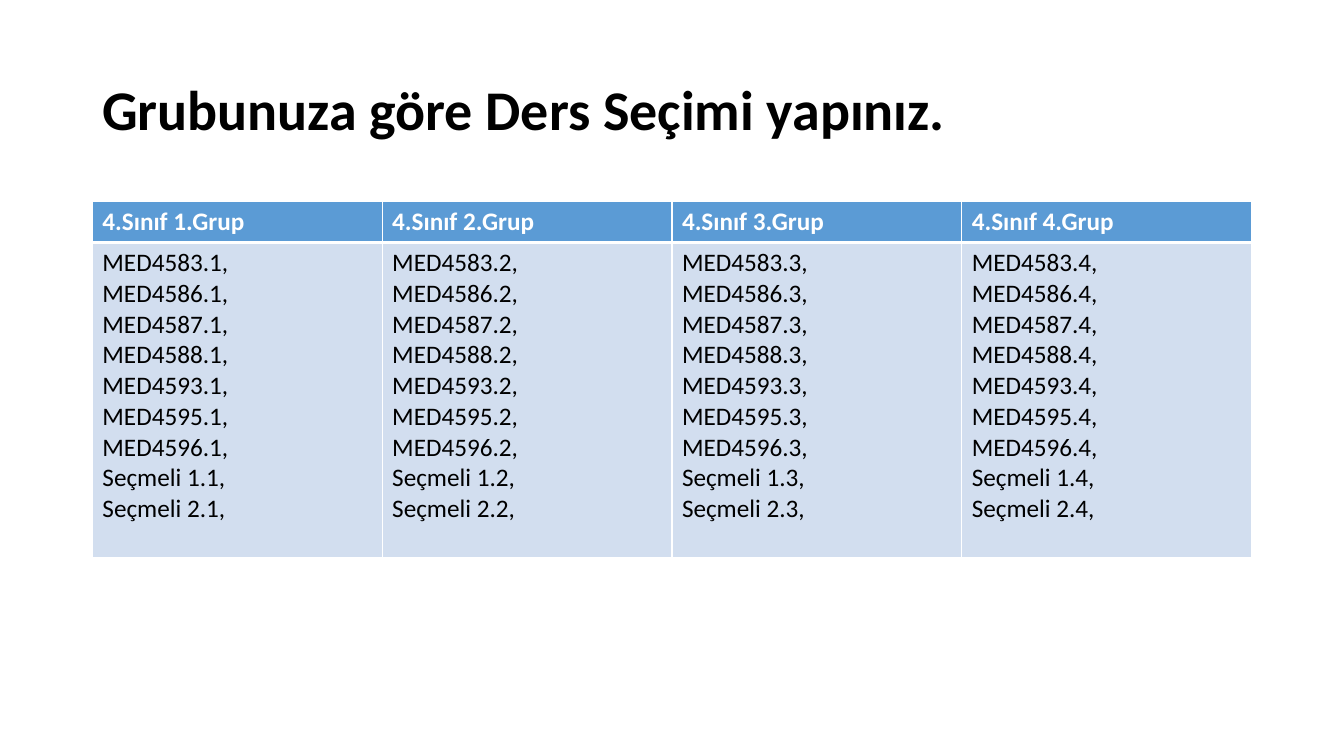
from lxml import etree
from pptx import Presentation
from pptx import util as u
from pptx.dml.color import RGBColor
from pptx.enum import text
from pptx.oxml import ns

PX = 9525  # EMU per px, 96 px to the inch
WHITE = RGBColor(0xFF, 0xFF, 0xFF)
BLACK = RGBColor(0x00, 0x00, 0x00)
HEADER_BLUE = RGBColor(0x5B, 0x9B, 0xD5)
BODY_BLUE = RGBColor(0xD2, 0xDE, 0xEF)

LEFT, WIDTH = 88 * PX, 1104 * PX
HEADER_HEIGHT, BODY_HEIGHT = 39 * PX, 300 * PX
GROUPS = 4
COURSES = ["MED4583", "MED4586", "MED4587", "MED4588", "MED4593",
           "MED4595", "MED4596", "Seçmeli 1", "Seçmeli 2"]


def style_runs(frame, size, color, bold):
    for paragraph in frame.paragraphs:
        for run in paragraph.runs:
            run.font.name = "Calibri"
            run.font.size = u.Pt(size)
            run.font.bold = bold
            run.font.color.rgb = color


def style_cell(cell, fill, top, bottom):
    """Draw white borders (left and right 1 pt), then fill the cell."""
    properties = cell._tc.get_or_add_tcPr()
    for side, width in (("L", 1), ("R", 1), ("T", top), ("B", bottom)):
        border = etree.SubElement(properties, ns.qn(f"a:ln{side}"), w=str(u.Pt(width)))
        paint = etree.SubElement(border, ns.qn("a:solidFill"))
        etree.SubElement(paint, ns.qn("a:srgbClr"), val=str(WHITE))
    cell.fill.solid()
    cell.fill.fore_color.rgb = fill


deck = Presentation()
deck.slide_width, deck.slide_height = 1280 * PX, 720 * PX
slide = deck.slides.add_slide(deck.slide_layouts[6])

# Title
title = slide.shapes.add_textbox(LEFT, 38 * PX, WIDTH, 139 * PX).text_frame
title.word_wrap = True
title.vertical_anchor = text.MSO_ANCHOR.MIDDLE
title.text = "Grubunuza göre Ders Seçimi yapınız."
title.paragraphs[0].line_spacing = 0.9
style_runs(title, 40, BLACK, True)

# Course table, one column per group
courses = slide.shapes.add_table(2, GROUPS, LEFT, 192 * PX, WIDTH,
                                 HEADER_HEIGHT + BODY_HEIGHT).table
courses.rows[0].height = HEADER_HEIGHT
courses.rows[1].height = BODY_HEIGHT

for column in range(GROUPS):
    group = column + 1
    courses.columns[column].width = WIDTH // GROUPS

    header = courses.cell(0, column)
    header.text_frame.text = f"4.Sınıf {group}.Grup"
    style_runs(header.text_frame, 18, WHITE, True)
    style_cell(header, HEADER_BLUE, 1, 3)

    body = courses.cell(1, column)
    body.text_frame.text = "\n".join(f"{course}.{group}," for course in COURSES)
    style_runs(body.text_frame, 18, BLACK, False)
    style_cell(body, BODY_BLUE, 3, 1)

deck.save("out.pptx")
